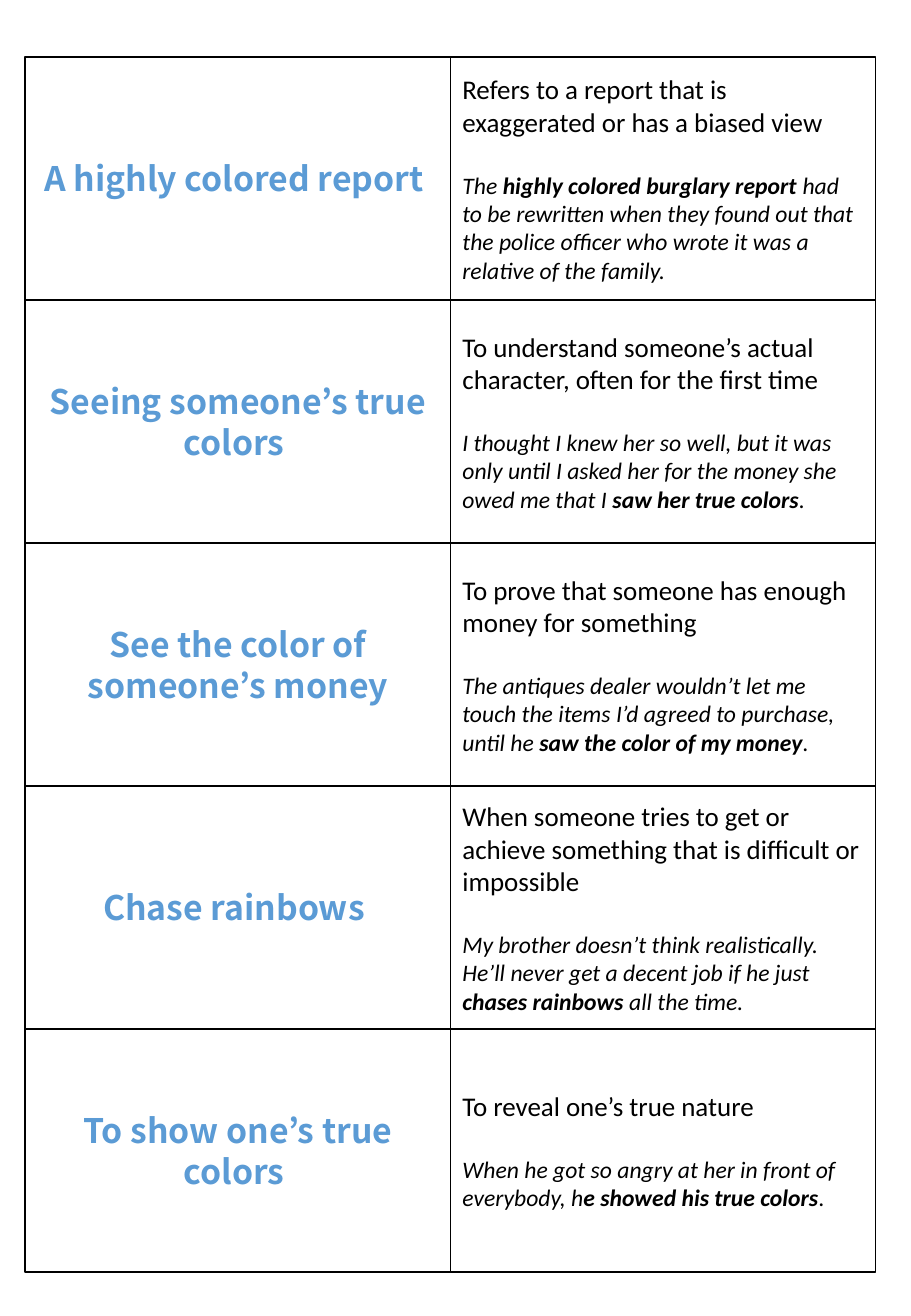
import pptx
import pptx.dml.color
import pptx.enum.shapes
import pptx.enum.text
import pptx.util
from pptx.util import Cm

LEFT, TOP = 0.53, 1.19
CARD_WIDTH, CARD_HEIGHT = 8.89, 5.08
BLACK, WHITE, BLUE = "000000", "FFFFFF", "5B9BD5"

IDIOMS = [
    ("A highly colored report ",
     "Refers to a report that is exaggerated or has a biased view",
     ("The ", "highly colored burglary report",
      " had to be rewritten when they found out that the police officer "
      "who wrote it was a relative of the family.")),
    ("Seeing someone’s true colors ",
     "To understand someone’s actual character, often for the first time",
     ("I thought I knew her so well, but it was only until I asked her "
      "for the money she owed me that I ", "saw her true colors", ".")),
    ("See the color of someone’s money",
     "To prove that someone has enough money for something",
     ("The antiques dealer wouldn’t let me touch the items I’d agreed to "
      "purchase, until he ", "saw the color of my money", ".")),
    ("Chase rainbows ",
     "When someone tries to get or achieve something that is difficult or impossible",
     ("My brother doesn’t think realistically. He’ll never get a decent job "
      "if he just ", "chases rainbows", " all the time.")),
    ("To show one’s true colors ",
     "To reveal one’s true nature",
     ("When he got so angry at her in front of everybody, h",
      "e showed his true colors", ".")),
]


def color(value):
    """Turn a hex string into a colour."""
    return pptx.dml.color.RGBColor.from_string(value)


def add_card(page, column, row):
    """Add one outlined card of the grid and return its text frame."""
    box = page.shapes.add_shape(
        pptx.enum.shapes.MSO_SHAPE.RECTANGLE,
        Cm(LEFT + column * CARD_WIDTH), Cm(TOP + row * CARD_HEIGHT),
        Cm(CARD_WIDTH), Cm(CARD_HEIGHT))
    box.shadow.inherit = False
    box.fill.solid()
    box.fill.fore_color.rgb = color(WHITE)
    box.line.color.rgb = color(BLACK)
    box.line.width = pptx.util.Pt(1)
    frame = box.text_frame
    frame.word_wrap = True
    frame.vertical_anchor = pptx.enum.text.MSO_ANCHOR.MIDDLE
    return frame


def add_span(para, text, size=14, font="Calibri", fill=BLACK, bold=False, italic=False):
    """Add a formatted run of text to a paragraph."""
    span = para.add_run()
    span.text = text
    span.font.size = pptx.util.Pt(size)
    span.font.name = font
    span.font.color.rgb = color(fill)
    span.font.bold = bold
    span.font.italic = italic


def add_idiom(page, row, idiom):
    """Add the card that names an idiom."""
    para = add_card(page, 0, row).paragraphs[0]
    para.alignment = pptx.enum.text.PP_ALIGN.CENTER
    add_span(para, idiom, size=20, font="Noto Sans CJK KR", fill=BLUE, bold=True)


def add_meaning(page, row, meaning, example):
    """Add the card with a meaning and an example that stresses the idiom."""
    frame = add_card(page, 1, row)
    para = frame.paragraphs[0]
    para.alignment = pptx.enum.text.PP_ALIGN.LEFT
    add_span(para, meaning, size=16)
    para = frame.add_paragraph()
    para.alignment = pptx.enum.text.PP_ALIGN.LEFT
    para.space_before = pptx.util.Pt(19.5)
    before, stressed, after = example
    add_span(para, before, italic=True)
    add_span(para, stressed, italic=True, bold=True)
    add_span(para, after, italic=True)


def main():
    """Build the page of idiom cards."""
    deck = pptx.Presentation()
    deck.slide_width, deck.slide_height = Cm(19.05), Cm(27.51)
    page = deck.slides.add_slide(deck.slide_layouts[6])
    for row, (idiom, meaning, example) in enumerate(IDIOMS):
        add_idiom(page, row, idiom)
        add_meaning(page, row, meaning, example)
    deck.save("out.pptx")


if __name__ == "__main__":
    main()
